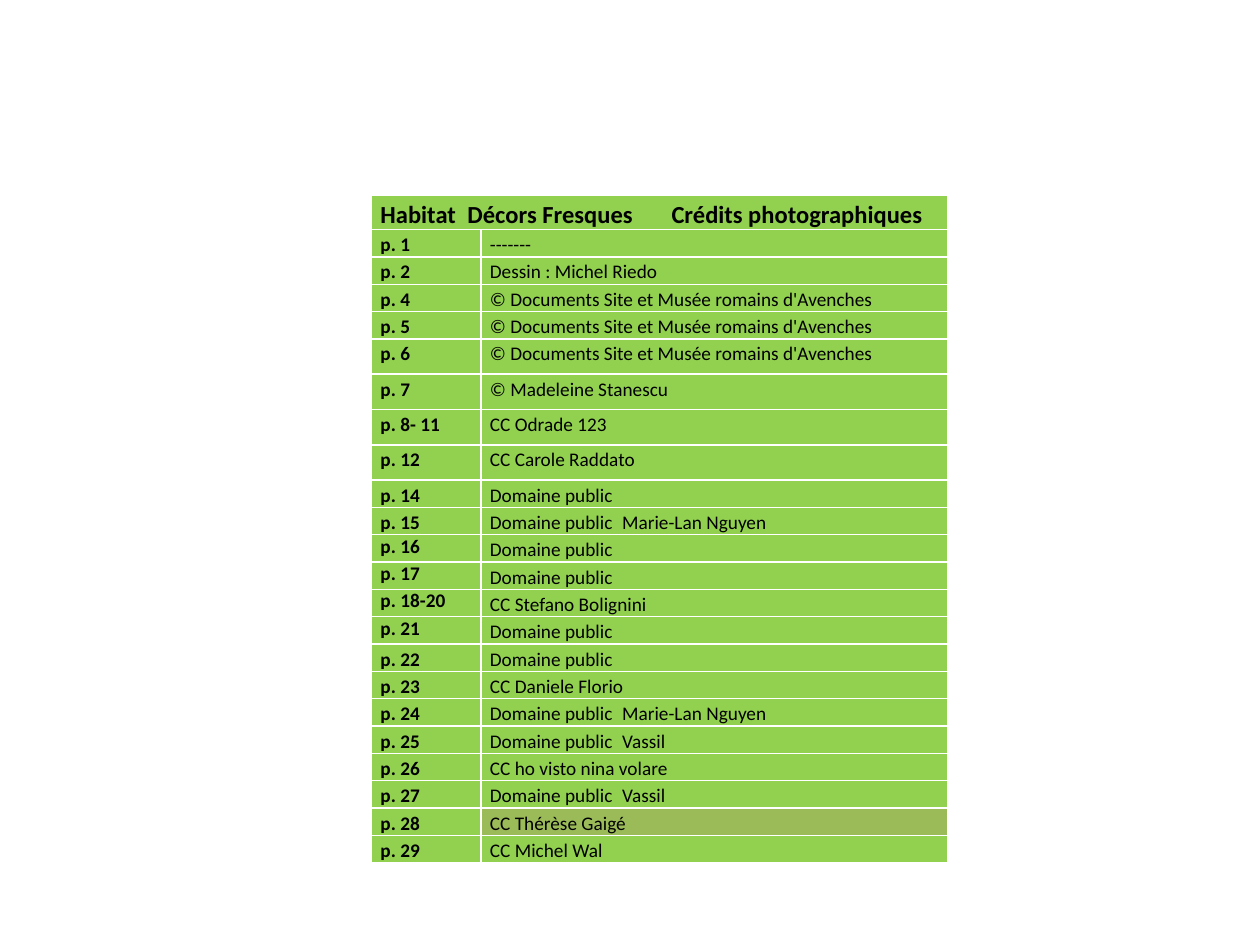
from lxml import etree
from pptx import Presentation
from pptx import util as u
from pptx.dml.color import RGBColor
from pptx.oxml.ns import qn

COLORS = {"text": "000000", "green": "92D050", "olive": "9BBB59"}
FONT = "Calibri"
TITLE = "Habitat\tDécors Fresques\tCrédits photographiques"
TITLE_TABS = (0.69, 2.31)
CREDIT_TABS = (1.05,)
AVENCHES = "© Documents Site et Musée romains d'Avenches"
PUBLIC = "Domaine public"
CREDITS = [
    ("p. 1", "-------"),
    ("p. 2", "Dessin : Michel Riedo"),
    ("p. 4", AVENCHES),
    ("p. 5", AVENCHES),
    ("p. 6", AVENCHES),
    ("p. 7", "© Madeleine Stanescu"),
    ("p. 8- 11", "CC Odrade 123"),
    ("p. 12", "CC Carole Raddato"),
    ("p. 14", PUBLIC),
    ("p. 15", PUBLIC + "\tMarie-Lan Nguyen"),
    ("p. 16", PUBLIC),
    ("p. 17", PUBLIC),
    ("p. 18-20", "CC Stefano Bolignini"),
    ("p. 21", PUBLIC),
    ("p. 22", PUBLIC),
    ("p. 23", "CC Daniele Florio"),
    ("p. 24", PUBLIC + "\tMarie-Lan Nguyen"),
    ("p. 25", PUBLIC + "\tVassil"),
    ("p. 26", "CC ho visto nina volare"),
    ("p. 27", PUBLIC + "\tVassil"),
    ("p. 28", "CC Thérèse Gaigé"),
    ("p. 29", "CC Michel Wal"),
]
TALL = {"p. 6", "p. 7", "p. 8- 11", "p. 12"}
SINGLE_SPACED = {"p. 16", "p. 17", "p. 18-20", "p. 21"}


def add_tabs(para, stops):
    tabs = etree.SubElement(para._p.get_or_add_pPr(), qn("a:tabLst"))
    for stop in stops:
        etree.SubElement(tabs, qn("a:tab"), pos=str(u.Inches(stop)), algn="l")


def fill_cell(cell, words, size=11, bold=False, fill="green", spacing=1.15, stops=()):
    cell.margin_left = cell.margin_right = u.Inches(0.07)
    cell.margin_top = cell.margin_bottom = 0
    cell.fill.solid()
    cell.fill.fore_color.rgb = RGBColor.from_string(COLORS[fill])
    cell.text = words
    para = cell.text_frame.paragraphs[0]
    if "\t" in words:
        add_tabs(para, stops)
    para.line_spacing = spacing
    para.font.name = FONT
    para.font.size = u.Pt(size)
    para.font.bold = bold
    para.font.color.rgb = RGBColor.from_string(COLORS["text"])


def add_credits(page, left, top, width, height):
    table = page.shapes.add_table(len(CREDITS) + 1, 2, left, top, width, height).table
    table.horz_banding = False
    table.columns[0].width = int(width * 0.19)
    table.columns[1].width = width - table.columns[0].width

    table.rows[0].height = u.Inches(0.27)
    table.cell(0, 0).merge(table.cell(0, 1))
    fill_cell(table.cell(0, 0), TITLE, size=14, bold=True, stops=TITLE_TABS)

    for row, (pages, credit) in enumerate(CREDITS, 1):
        table.rows[row].height = u.Inches(0.28 if pages in TALL else 0.2)
        fill_cell(table.cell(row, 0), pages, bold=True,
                  spacing=1.0 if pages in SINGLE_SPACED else 1.15)
        fill_cell(table.cell(row, 1), credit, stops=CREDIT_TABS,
                  fill="olive" if pages == "p. 28" else "green")


def main():
    deck = Presentation()
    deck.slide_width, deck.slide_height = u.Inches(10), u.Inches(7.5)
    page = deck.slides.add_slide(deck.slide_layouts[6])
    add_credits(page, u.Inches(2.95), u.Inches(1.55), u.Inches(4.57), u.Inches(5.21))
    deck.save("out.pptx")


if __name__ == "__main__":
    main()
